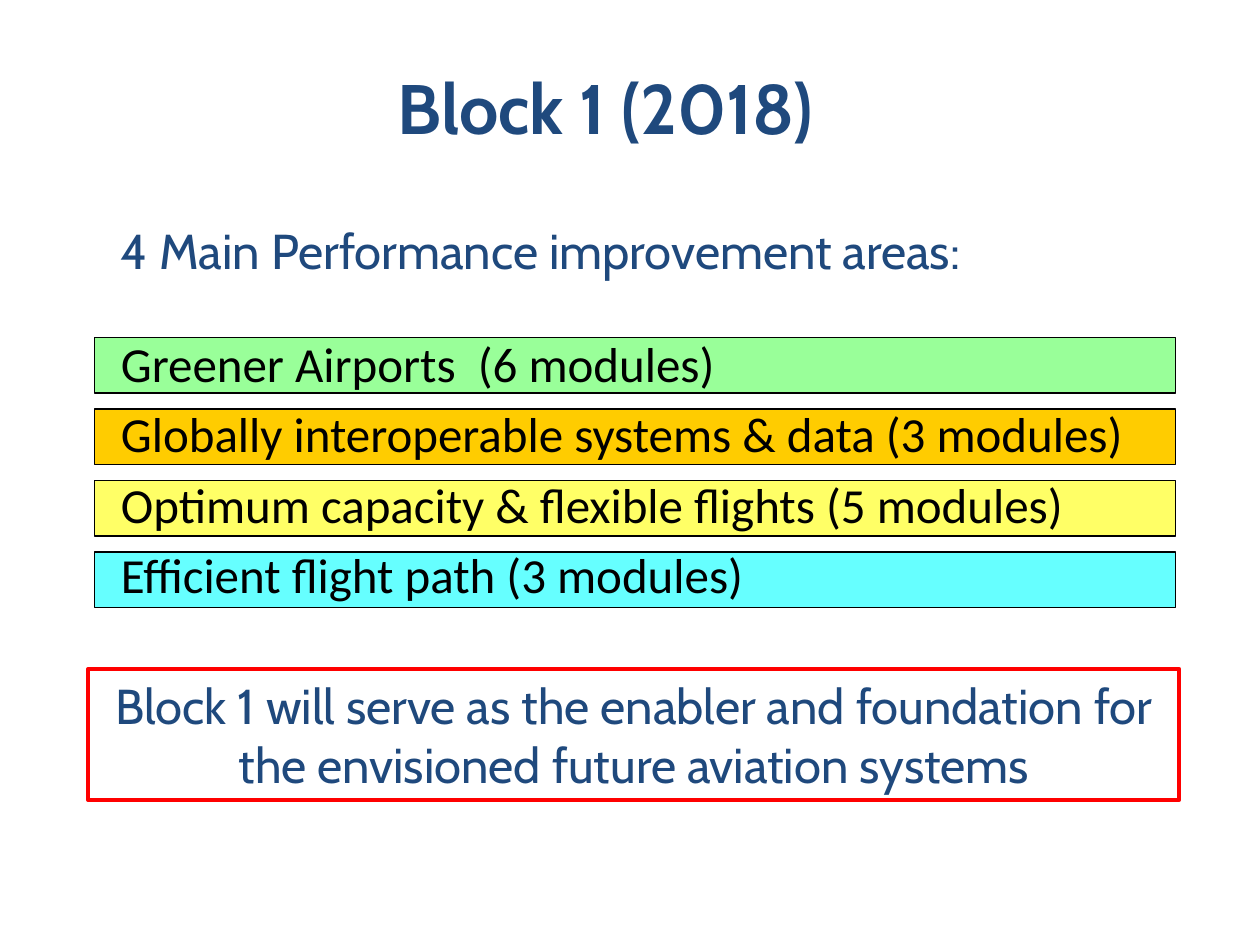
from dataclasses import dataclass

from pptx import Presentation
from pptx import util as u
from pptx.dml.color import RGBColor
from pptx.enum import shapes, text

# Grid of 100 columns by 75 rows
CELL = u.Inches(0.1)
NAVY, BLACK, RED = "1F497D", "000000", "FF0000"
HEADING = {"name": "Cabin", "size": u.Pt(28), "color": NAVY}
TITLE = {**HEADING, "size": u.Pt(40), "bold": True}
AREA_TEXT = {"name": "Calibri", "size": u.Pt(28), "color": BLACK}


@dataclass
class Box:
    col: float
    row: float
    cols: float
    rows: float

    def emu(self) -> list[int]:
        return [round(n * CELL) for n in (self.col, self.row, self.cols, self.rows)]


@dataclass
class Area:
    label: str
    fill: str


AREAS = [
    Area("Greener Airports  (6 modules)", "99FF99"),
    Area("Globally interoperable systems & data (3 modules)", "FFCC00"),
    Area("Optimum capacity & flexible flights (5 modules)", "FFFF66"),
    Area("Efficient flight path (3 modules)", "66FFFF"),
]
FIRST_BAR = Box(7.5, 26.8, 85.8, 4.4)
BAR_PITCH = 5.67
# Points before the first label, and between labels so that they keep the pitch of the bars
FIRST_GAP, LABEL_GAP = 31, 6.6


def rgb(value: str) -> RGBColor:
    return RGBColor.from_string(value)


def add_rect(s, box: Box, line: str, width: float, fill: str | None = None):
    sp = s.shapes.add_shape(shapes.MSO_SHAPE.RECTANGLE, *box.emu())
    sp.shadow.inherit = False
    if fill:
        sp.fill.solid()
        sp.fill.fore_color.rgb = rgb(fill)
    else:
        sp.fill.background()
    sp.line.color.rgb = rgb(line)
    sp.line.width = u.Pt(width)
    return sp


def write(p, words: str, style: dict, align=text.PP_ALIGN.LEFT, before: float = 0) -> None:
    p.alignment = align
    if before:
        p.space_before = u.Pt(before)
    r = p.add_run()
    r.text = words
    for name, value in style.items():
        if name == "color":
            r.font.color.rgb = rgb(value)
        else:
            setattr(r.font, name, value)


def add_text_frame(s, box: Box):
    tf = s.shapes.add_textbox(*box.emu()).text_frame
    tf.word_wrap = True
    return tf


def main() -> None:
    prs = Presentation()
    prs.slide_width, prs.slide_height = 100 * CELL, 75 * CELL
    s = prs.slides.add_slide(prs.slide_layouts[6])

    for i, area in enumerate(AREAS):
        bar = Box(FIRST_BAR.col, FIRST_BAR.row + i * BAR_PITCH, FIRST_BAR.cols, FIRST_BAR.rows)
        add_rect(s, bar, BLACK, 0.75, area.fill)

    tf = add_text_frame(s, Box(0, 4.8, 96.1, 7.3))
    tf.vertical_anchor = text.MSO_ANCHOR.MIDDLE
    write(tf.paragraphs[0], "Block 1 (2018)", TITLE, text.PP_ALIGN.CENTER)

    tf = add_text_frame(s, Box(4.3, 17, 94.5, 49.1))
    tf.margin_left = u.Inches(0.53)
    write(tf.paragraphs[0], "4 Main Performance improvement areas:", HEADING)
    for i, area in enumerate(AREAS):
        write(tf.add_paragraph(), area.label, AREA_TEXT, before=LABEL_GAP if i else FIRST_GAP)

    tf = add_rect(s, Box(7, 53.1, 86.6, 10.4), RED, 2.25).text_frame
    tf.word_wrap = True
    tf.vertical_anchor = text.MSO_ANCHOR.TOP
    write(tf.paragraphs[0],
          "Block 1 will serve as the enabler and foundation for the envisioned future aviation systems",
          HEADING, text.PP_ALIGN.CENTER)

    prs.save("out.pptx")


if __name__ == "__main__":
    main()
